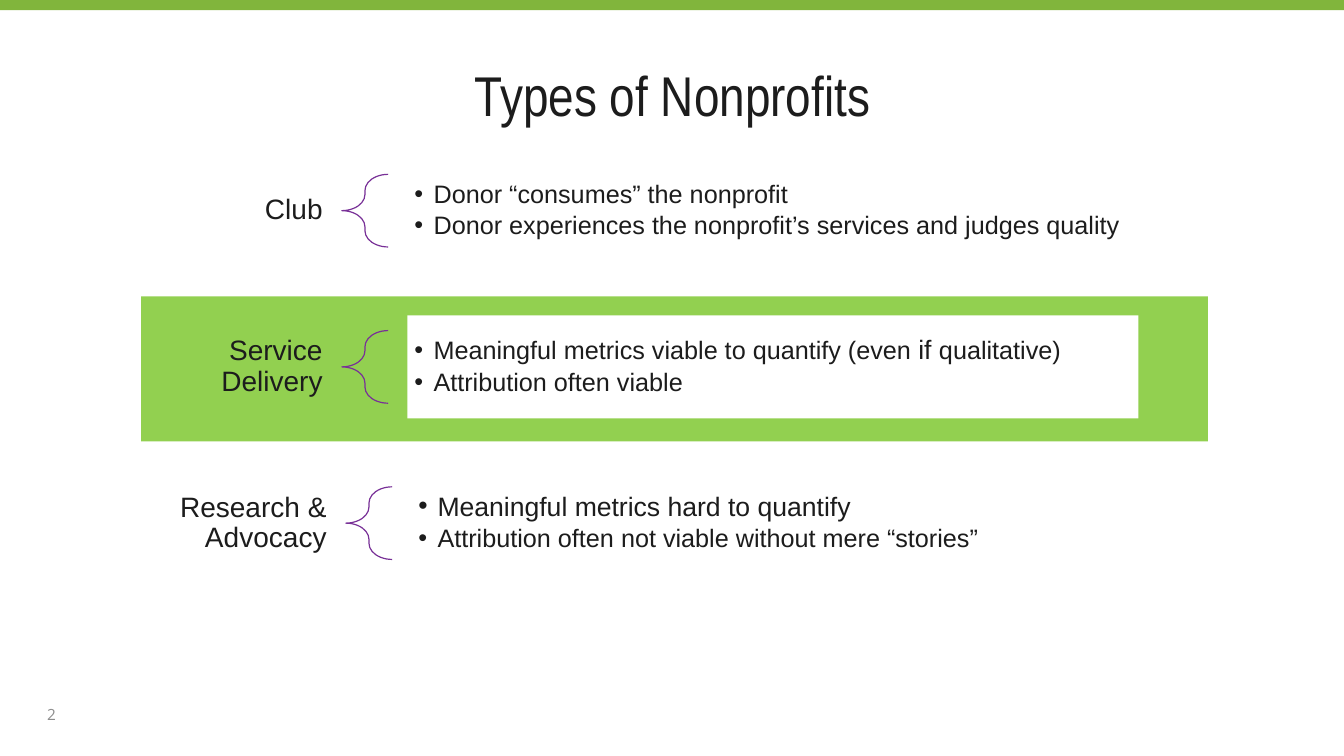
from pptx import Presentation
from pptx.dml.color import RGBColor
from pptx.enum.shapes import MSO_SHAPE
from pptx.enum.text import MSO_ANCHOR, PP_ALIGN
from pptx.oxml.ns import qn
from pptx.util import Pt
from lxml.etree import SubElement

TITLE = "Types of Nonprofits"
NUMBER = "2"
ROWS = [
    ("Club", 135, 0, [
        [("Donor “consumes” the nonprofit", 18)],
        [("Donor experiences the nonprofit’s services and judges quality", 18)],
    ]),
    ("Service Delivery", 190, 0, [
        [("Meaningful metrics viable to quantify (even ", 18),
         ("if ", 19), ("qualitative)", 18)],
        [("Attribution often viable", 18)],
    ]),
    ("Research & Advocacy", 190, 4, [
        [("Meaningful metrics hard to quantify", 19)],
        [("Attribution often not viable without mere “stories”", 18)],
    ]),
]
COLORS = {"bar": "81B53C", "band": "92D050", "brace": "783097",
          "text": "1C1C1C", "number": "8D8D8D", "white": "FFFFFF"}
PX = 9144
EDGE, TOP, STEP, HIGH = 339, 158, 155, 102


def color(name):
    return RGBColor.from_string(COLORS[name])


def style(font, name, size, tint):
    font.name, font.size = name, Pt(size)
    font.color.rgb = color(tint)


def add_shape(kind, box, fill=None, line=None):
    shape = slide.shapes.add_shape(kind, *(n * PX for n in box))
    shape.shadow.inherit = False
    if fill:
        shape.fill.solid()
        shape.fill.fore_color.rgb = color(fill)
    else:
        shape.fill.background()
    if line:
        shape.line.color.rgb = color(line)
        shape.line.width = Pt(0.85)
    else:
        shape.line.fill.background()
    return shape


def set_frame(frame, sides, ends, anchor=MSO_ANCHOR.MIDDLE):
    frame.word_wrap = True
    frame.vertical_anchor = anchor
    frame.margin_left = frame.margin_right = sides * PX
    frame.margin_top = frame.margin_bottom = ends * PX


def add_label(text, box, sides, ends, align, font):
    frame = slide.shapes.add_textbox(*(n * PX for n in box)).text_frame
    set_frame(frame, sides, ends)
    frame.text = text
    para = frame.paragraphs[0]
    para.alignment = align
    para.line_spacing = 0.9
    style(para.runs[0].font, *font)


def add_list(box, items):
    frame = add_shape(MSO_SHAPE.RECTANGLE, box, "white").text_frame
    set_frame(frame, 7, 7)
    for i, parts in enumerate(items):
        para = frame.add_paragraph() if i else frame.paragraphs[0]
        para.alignment = PP_ALIGN.LEFT
        para.line_spacing = 0.9
        para.space_after = Pt(3)
        props = para._p.get_or_add_pPr()
        props.set("marL", str(19 * PX))
        props.set("indent", str(-19 * PX))
        SubElement(props, qn("a:buFont")).set("typeface", "Arial")
        SubElement(props, qn("a:buChar")).set("char", "•")
        for text, size in parts:
            run = para.add_run()
            run.text = text
            style(run.font, "Arial", size, "text")


deck = Presentation()
deck.slide_width, deck.slide_height = 1333 * PX, 750 * PX
slide = deck.slides.add_slide(deck.slide_layouts[5])

add_shape(MSO_SHAPE.RECTANGLE, (0, 0, 1333, 10), "bar")
add_shape(MSO_SHAPE.RECTANGLE, (140, 294, 1058, 144), "band")

title = slide.shapes.title
title.left, title.top, title.width, title.height = (
    n * PX for n in (67, 2, 1200, 125))
set_frame(title.text_frame, 0, 0, MSO_ANCHOR.BOTTOM)
title.text_frame.text = TITLE
head = title.text_frame.paragraphs[0]
head.alignment = PP_ALIGN.CENTER
style(head.runs[0].font, "Arial Narrow", 40, "text")

add_label(NUMBER, (37, 686, 1175, 47), 10, 5, PP_ALIGN.LEFT,
          ("Open Sans", 11, "number"))

for i, (name, wide, shift, items) in enumerate(ROWS):
    x, y = EDGE + shift, TOP + i * STEP
    add_label(name, (x - wide, y, wide, HIGH), 19, 7, PP_ALIGN.RIGHT,
              ("Arial", 20, "text"))
    brace = add_shape(MSO_SHAPE.LEFT_BRACE, (x, y + 15, 46, 72), line="brace")
    brace.adjustments[0], brace.adjustments[1] = 0.35, 0.5
    add_list((x + 65, y, 725, HIGH), items)

deck.save("out.pptx")
